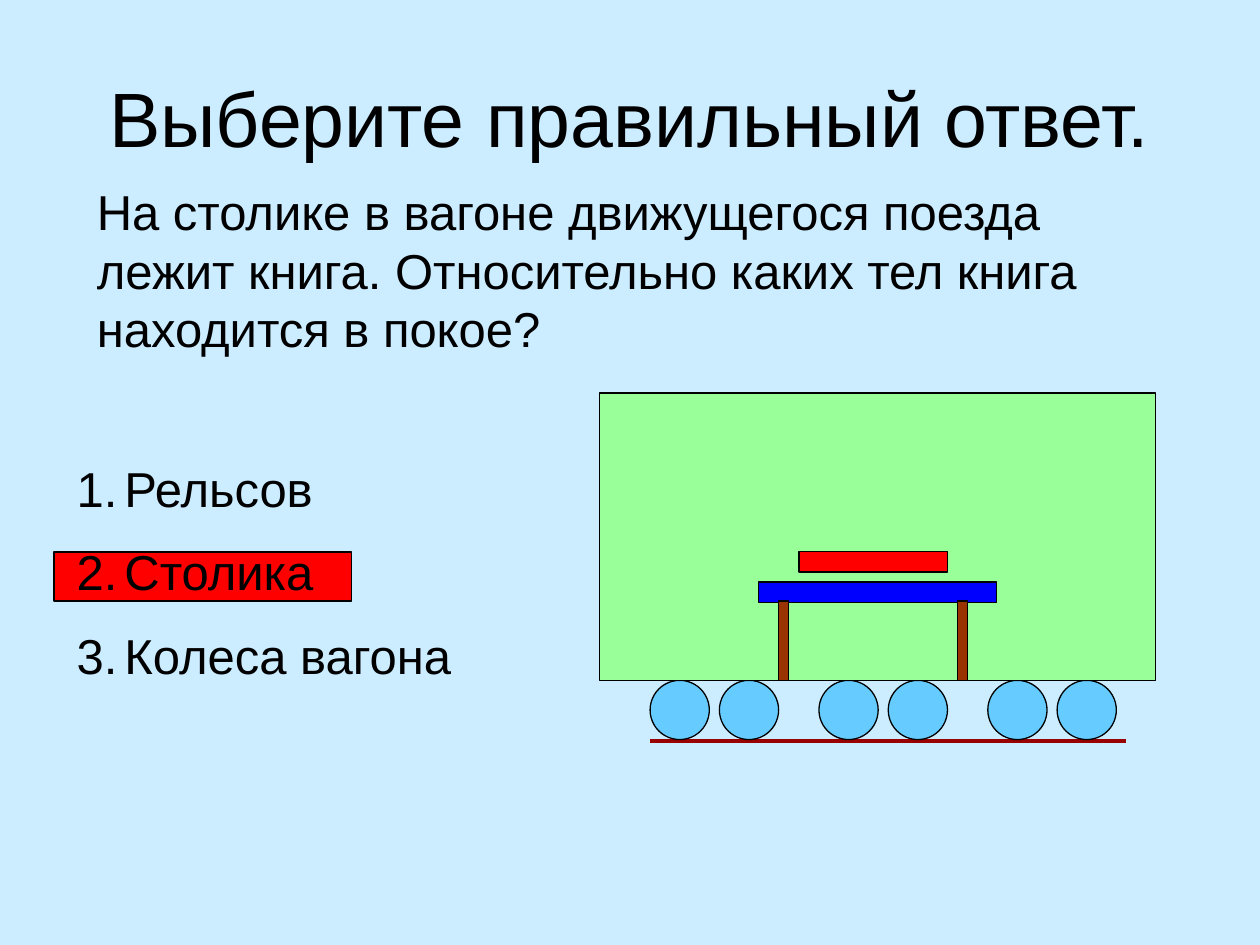
from dataclasses import dataclass

from lxml import etree
from pptx import Presentation
from pptx.dml.color import RGBColor
from pptx.enum import shapes, text
from pptx.oxml import ns
from pptx.util import Inches, Pt

BLACK = "000000"
RECTANGLE = shapes.MSO_SHAPE.RECTANGLE
OVAL = shapes.MSO_SHAPE.OVAL


@dataclass
class Part:
    left: float
    top: float
    width: float
    height: float
    fill: str
    kind: shapes.MSO_SHAPE = RECTANGLE


@dataclass
class Caption:
    left: float
    top: float
    width: float
    height: float
    lines: list[str]
    size: int = 28
    space_before: int = 14
    centred: bool = False
    numbered: bool = False


def colour(value: str) -> RGBColor:
    return RGBColor.from_string(value)


def draw_part(page, part: Part) -> None:
    shape = page.shapes.add_shape(part.kind, Inches(part.left), Inches(part.top),
                                  Inches(part.width), Inches(part.height))
    shape.shadow.inherit = False
    shape.fill.solid()
    shape.fill.fore_color.rgb = colour(part.fill)
    shape.line.color.rgb = colour(BLACK)
    shape.line.width = Pt(0.75)


def draw_rail(page, left: float, right: float, height: float) -> None:
    rail = page.shapes.add_connector(shapes.MSO_CONNECTOR.STRAIGHT, Inches(left),
                                     Inches(height), Inches(right), Inches(height))
    rail.line.color.rgb = colour("990000")
    rail.line.width = Pt(2.25)
    etree.SubElement(rail._element.spPr, ns.qn("a:effectLst"))


def number_paragraph(para) -> None:
    properties = para._p.get_or_add_pPr()
    properties.set("marL", str(Inches(0.38)))
    properties.set("indent", str(-Inches(0.38)))
    etree.SubElement(properties, ns.qn("a:buFont"), typeface="Arial")
    etree.SubElement(properties, ns.qn("a:buAutoNum"), type="arabicPeriod")


def draw_caption(page, caption: Caption) -> None:
    box = page.shapes.add_textbox(Inches(caption.left), Inches(caption.top),
                                  Inches(caption.width), Inches(caption.height))
    frame = box.text_frame
    frame.word_wrap = True
    frame.text = "\n".join(caption.lines)
    if caption.centred:
        frame.vertical_anchor = text.MSO_ANCHOR.MIDDLE
    else:
        frame.auto_size = text.MSO_AUTO_SIZE.SHAPE_TO_FIT_TEXT
    for para in frame.paragraphs:
        para.space_before = Pt(caption.space_before)
        if caption.centred:
            para.alignment = text.PP_ALIGN.CENTER
        if caption.numbered:
            number_paragraph(para)
        for span in para.runs:
            span.font.name = "Arial"
            span.font.size = Pt(caption.size)
            span.font.color.rgb = colour(BLACK)


def main() -> None:
    deck = Presentation()
    deck.slide_width, deck.slide_height = Inches(10), Inches(7.5)
    page = deck.slides.add_slide(deck.slide_layouts[6])
    page.background.fill.solid()
    page.background.fill.fore_color.rgb = colour("CCECFF")

    # Highlight behind the right answer
    draw_part(page, Part(0.43, 4.38, 2.36, 0.39, "FF0000"))

    # Title and question
    draw_caption(page, Caption(0.5, 0.3, 9, 1.25, ["Выберите правильный ответ."],
                               size=44, space_before=0, centred=True))
    draw_caption(page, Caption(0.67, 1.39, 8.82, 1.5, [
        "На столике в вагоне движущегося поезда лежит книга. "
        "Относительно каких тел книга находится в покое?"]))

    # Rail and three pairs of wheels
    draw_rail(page, 5.16, 8.94, 5.88)
    for pair in range(3):
        for wheel in range(2):
            left = 5.16 + 1.34 * pair + 0.55 * wheel
            draw_part(page, Part(left, 5.4, 0.47, 0.47, "66CCFF", OVAL))

    # Carriage, table top, two legs and book
    draw_part(page, Part(4.76, 3.12, 4.41, 2.28, "99FF99"))
    draw_part(page, Part(6.02, 4.62, 1.89, 0.16, "0000FF"))
    for left in (6.18, 7.6):
        draw_part(page, Part(left, 4.77, 0.08, 0.63, "993300"))
    draw_part(page, Part(6.34, 4.38, 1.18, 0.16, "FF0000"))

    # Answers
    draw_caption(page, Caption(0.51, 3.59, 3.7, 1.97,
                               ["Рельсов", "Столика", "Колеса вагона"], numbered=True))

    deck.save("out.pptx")


if __name__ == "__main__":
    main()
